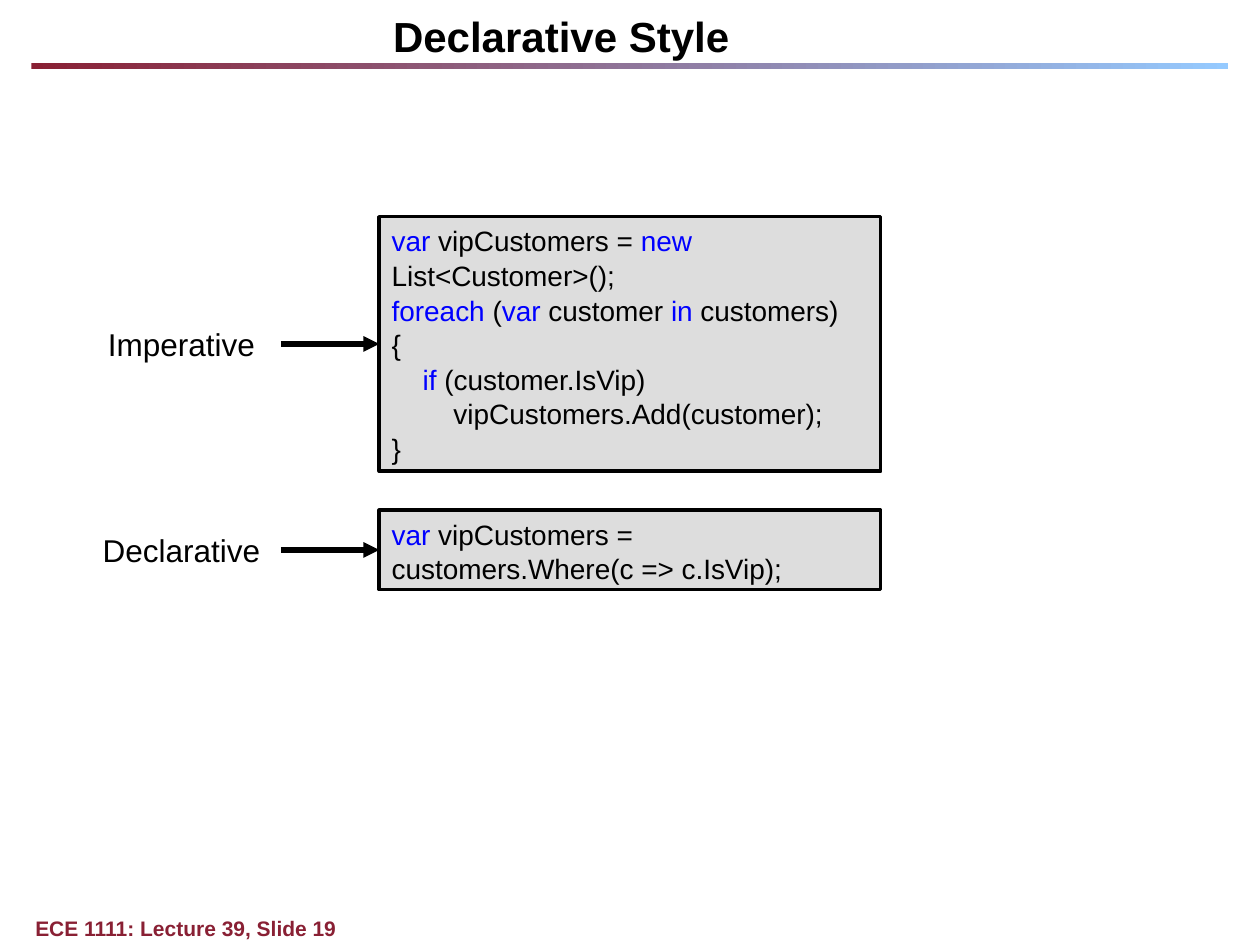
from lxml import etree
from pptx import Presentation
from pptx import util as u
from pptx.dml.color import RGBColor
from pptx.enum import shapes, text
from pptx.oxml import ns

COLORS = {
    "maroon": "892034",
    "sky": "95CAFF",
    "ink": "000000",
    "keyword": "0000FF",
    "panel": "DDDDDD",
}
FONT = "Arial"

# Each line of code is a list of (text, colour) runs.
IMPERATIVE = [
    [("var ", "keyword"), ("vipCustomers = ", "ink"), ("new ", "keyword"),
     ("List<Customer>();", "ink")],
    [("foreach", "keyword"), (" (", "ink"), ("var", "keyword"),
     (" customer ", "ink"), ("in", "keyword"), (" customers)", "ink")],
    [("{", "ink")],
    [("    ", "ink"), ("if", "keyword"), (" (customer.IsVip)", "ink")],
    [("        vipCustomers.Add(customer);", "ink")],
    [("}", "ink")],
]
DECLARATIVE = [
    [("var ", "keyword"),
     ("vipCustomers = customers.Where(c => c.IsVip);", "ink")],
]


def rgb(name):
    return RGBColor.from_string(COLORS[name])


def add_run(p, content, size, color="ink", bold=False):
    r = p.add_run()
    r.text = content
    r.font.name = FONT
    r.font.size = u.Pt(size)
    r.font.bold = bold
    r.font.color.rgb = rgb(color)


def add_label(s, box, content, size, color="ink", bold=False,
              align=text.PP_ALIGN.CENTER):
    sp = s.shapes.add_textbox(*box)
    tf = sp.text_frame
    tf.word_wrap = True
    p = tf.paragraphs[0]
    p.alignment = align
    add_run(p, content, size, color, bold)
    return sp


def add_header(s, left, top):
    title = add_label(s, (left, top, u.Inches(9), u.Inches(0.4)),
                      "Declarative Style ", 24, bold=True)
    tf = title.text_frame
    tf.margin_top = u.Inches(0.02)
    tf.margin_bottom = 0


def add_rule(s, left, top, width):
    """Gradient bar under the title."""
    bar = s.shapes.add_shape(shapes.MSO_SHAPE.RECTANGLE, left, top, width,
                             u.Inches(0.05))
    bar.shadow.inherit = False
    bar.line.fill.background()
    bar.fill.gradient()
    bar.fill.gradient_angle = 0
    for stop, name, position in zip(bar.fill.gradient_stops,
                                    ("maroon", "sky"), (0, 1)):
        stop.color.rgb = rgb(name)
        stop.position = position


def add_footer(s, left, top):
    sp = add_label(s, (left, top, u.Inches(8.92), u.Inches(0.2)),
                   "ECE 1111: Lecture 39, Slide 19", 12, "maroon", True,
                   text.PP_ALIGN.LEFT)
    tf = sp.text_frame
    tf.margin_left = tf.margin_right = tf.margin_top = tf.margin_bottom = 0


def add_code(s, box, lines):
    sp = s.shapes.add_shape(shapes.MSO_SHAPE.RECTANGLE, *box)
    sp.shadow.inherit = False
    sp.fill.solid()
    sp.fill.fore_color.rgb = rgb("panel")
    sp.line.color.rgb = rgb("ink")
    sp.line.width = u.Pt(2)
    tf = sp.text_frame
    tf.word_wrap = True
    tf.vertical_anchor = text.MSO_ANCHOR.TOP
    for i, line in enumerate(lines):
        p = tf.add_paragraph() if i else tf.paragraphs[0]
        p.alignment = text.PP_ALIGN.LEFT
        p.line_spacing = 1.03
        for content, color in line:
            add_run(p, content, 16, color)
    return sp


def add_arrow(s, start, end):
    """Arrow from the right side of start to the left side of end."""
    line = s.shapes.add_connector(shapes.MSO_CONNECTOR.STRAIGHT, 0, 0, 0, 0)
    line.begin_connect(start, 3)
    line.end_connect(end, 1)
    line.line.color.rgb = rgb("ink")
    line.line.width = u.Pt(3)
    etree.SubElement(line.line._get_or_add_ln(), ns.qn("a:tailEnd"),
                     type="triangle")
    etree.SubElement(line._element.spPr, ns.qn("a:effectLst"))


def add_example(s, left, top, height, name, lines):
    """Label, arrow and code panel, centred on one line."""
    code = add_code(s, (left + u.Inches(2.36), top, u.Inches(3.98), height),
                    lines)
    label_height = u.Inches(0.4)
    label = add_label(s, (left, top + (height - label_height) // 2,
                          u.Inches(1.58), label_height), name, 18)
    add_arrow(s, label, code)


def main():
    prs = Presentation()
    prs.slide_width, prs.slide_height = u.Inches(10), u.Inches(7.5)
    s = prs.slides.add_slide(prs.slide_layouts[6])
    add_rule(s, u.Inches(0.25), u.Inches(0.5), u.Inches(9.5))
    add_footer(s, u.Inches(0.28), u.Inches(7.27))
    add_header(s, 0, u.Inches(0.06))
    left = u.Inches(0.65)
    add_example(s, left, u.Inches(1.72), u.Inches(2.02), "Imperative",
                IMPERATIVE)
    add_example(s, left, u.Inches(4.05), u.Inches(0.63), "Declarative",
                DECLARATIVE)
    prs.save("out.pptx")


if __name__ == "__main__":
    main()
